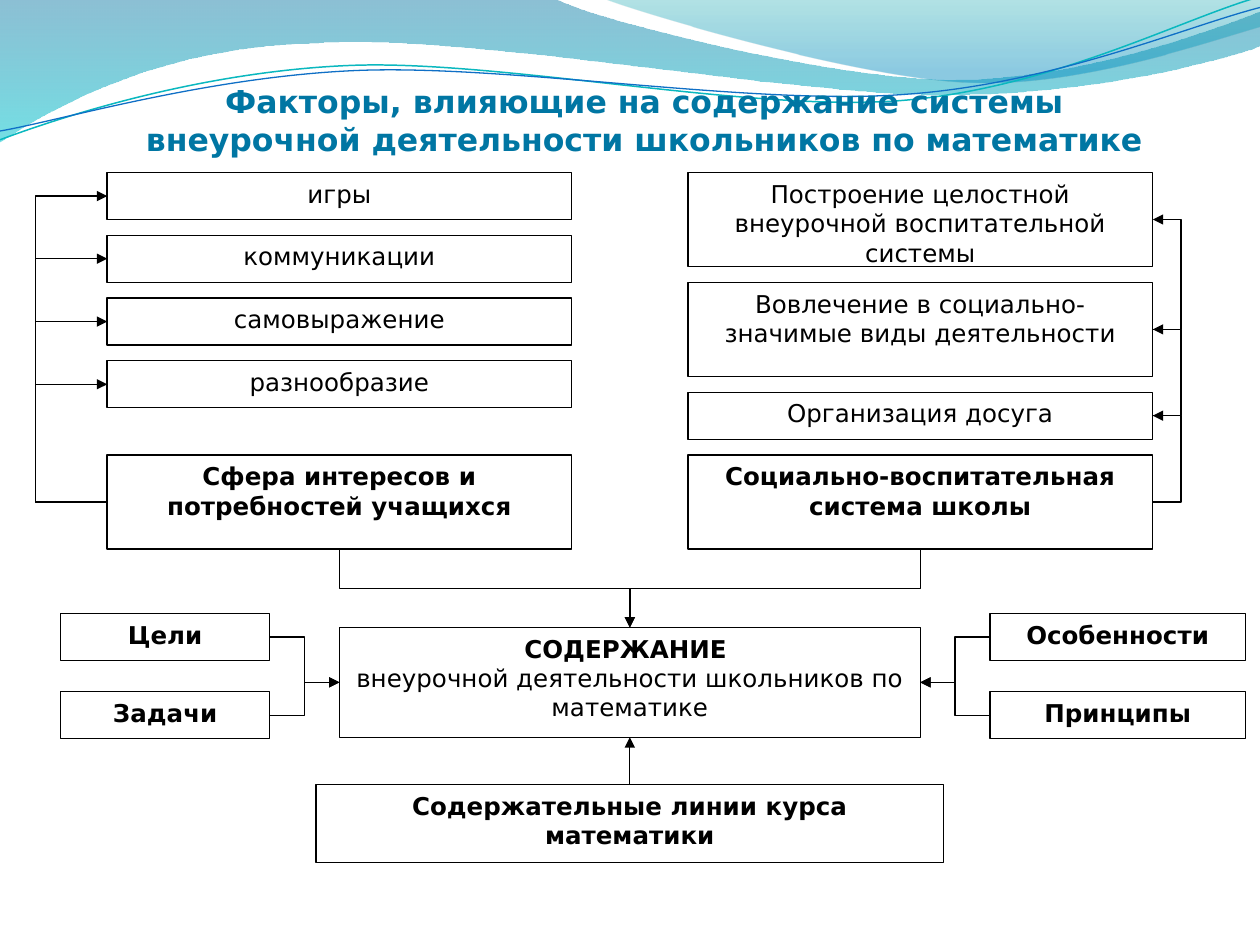
from dataclasses import dataclass
from math import cos, radians, sin

from lxml.etree import SubElement
from pptx import Presentation
from pptx.dml.color import RGBColor
from pptx.enum.shapes import MSO_CONNECTOR, MSO_SHAPE
from pptx.enum.text import MSO_ANCHOR, MSO_AUTO_SIZE, PP_ALIGN
from pptx.oxml.ns import qn
from pptx.util import Emu, Inches, Pt


@dataclass(frozen=True)
class Theme:
    font: str = "DejaVu Sans"
    ink: str = "000000"
    paper: str = "FFFFFF"
    title: str = "0076A3"
    teal: str = "0AB8BF"
    blue: str = "0F6FC6"
    head: int = 18
    body: int = 14
    rule: float = 0.75
    wide: float = 0.85
    tilt: float = 357.3
    back: tuple = (("0074A1", 0, 45), ("00C6CF", 1, 55))
    front: tuple = (("00A1A9", 0, 30), ("008BBF", 0.8, 45))


LEFT, COL, ROW = 0.85, 4.61 / 5, 4.98 / 40


def across(col):
    return Inches(LEFT + col * COL)


def down(row):
    return Inches(row * ROW)


def spin(spot, angle):
    (x, y), a = spot, radians(angle)
    return x * cos(a) - y * sin(a), x * sin(a) + y * cos(a)


def level(spots, angle):
    flat = [spin(spot, -angle) for spot in spots]
    mid = [(min(axis) + max(axis)) / 2 for axis in zip(*flat)]
    goal = spin(mid, angle)
    return [(x + goal[0] - mid[0], y + goal[1] - mid[1]) for x, y in flat]


class Board:
    def __init__(self, slide, theme):
        self.slide, self.theme = slide, theme
        self.shapes = slide.shapes

    def stroke(self, line, color, width):
        line.color.rgb = RGBColor.from_string(color)
        line.width = Pt(width)

    def style(self, para, size, color, bold=None):
        para.alignment = PP_ALIGN.CENTER
        para.font.name, para.font.size, para.font.bold = self.theme.font, Pt(size), bold
        para.font.color.rgb = RGBColor.from_string(color)

    def trail(self, start, parts, close, angle=0):
        spots = [start] + [p[i:i + 2] for p in parts for i in range(0, len(p), 2)]
        spots = [(Inches(x), Inches(y)) for x, y in level(spots, angle)]
        pen = self.shapes.build_freeform(*spots[0])
        pen.add_line_segments(spots[1:], close=close)
        shape = pen.convert_to_shape()
        shape.shadow.inherit = False
        shape.rotation = angle
        lines = list(shape._element.spPr.iter(qn("a:lnTo")))
        for part in parts:
            group, lines = lines[:len(part) // 2], lines[len(part) // 2:]
            if len(group) == 3:
                arc = SubElement(group[0].getparent(), qn("a:cubicBezTo"))
                group[0].addprevious(arc)
                for line in group:
                    arc.append(line[0])
                    line.getparent().remove(line)
        return shape

    def wave(self, start, parts, stops):
        shape = self.trail(start, parts, True)
        shape.line.fill.background()
        shape.fill.gradient()
        shape.fill.gradient_angle = 270
        for stop, (color, place, _) in zip(shape.fill.gradient_stops, stops):
            stop.color.rgb = RGBColor.from_string(color)
            stop.position = place
        tints = list(shape._element.spPr.iter(qn("a:srgbClr")))
        for tint, (_, _, alpha) in zip(tints, stops):
            SubElement(tint, qn("a:alpha")).set("val", str(alpha * 1000))

    def curve(self, start, parts, color, width):
        shape = self.trail(start, parts, False, self.theme.tilt)
        shape.fill.background()
        self.stroke(shape.line, color, width)

    def title(self, text, x, y, w, h):
        box = self.shapes.add_textbox(Inches(x), Inches(y), Inches(w), Inches(h))
        frame = box.text_frame
        frame.word_wrap = True
        frame.auto_size = MSO_AUTO_SIZE.SHAPE_TO_FIT_TEXT
        para = frame.paragraphs[0]
        para.text = text
        para.space_before = Pt(5)
        self.style(para, self.theme.head, self.theme.title, True)

    def box(self, col, row, cols, rows, *runs):
        shape = self.shapes.add_shape(
            MSO_SHAPE.RECTANGLE, across(col), down(row), Inches(cols * COL), down(rows))
        shape.shadow.inherit = False
        shape.fill.solid()
        shape.fill.fore_color.rgb = RGBColor.from_string(self.theme.paper)
        self.stroke(shape.line, self.theme.ink, self.theme.rule)
        frame = shape.text_frame
        frame.word_wrap = True
        frame.vertical_anchor = MSO_ANCHOR.TOP
        para = frame.paragraphs[0]
        same = len({bold for _, bold in runs}) == 1
        self.style(para, self.theme.body, self.theme.ink, runs[0][1] if same else None)
        for spot, (text, bold) in enumerate(runs):
            if spot:
                para.add_line_break()
            run = para.add_run()
            run.text = text
            if not same:
                run.font.bold = bold
        return shape

    def arrow(self, kind, x1, y1, x2, y2):
        link = self.shapes.add_connector(kind, int(x1), int(y1), int(x2), int(y2))
        self.stroke(link.line, self.theme.ink, self.theme.rule)
        tail = SubElement(link.line._get_or_add_ln(), qn("a:tailEnd"))
        tail.set("type", "triangle")
        SubElement(link._element.spPr, qn("a:effectLst"))
        return link

    def join(self, first, side, last, end):
        link = self.arrow(MSO_CONNECTOR.STRAIGHT, 0, 0, 0, 0)
        link.begin_connect(first, side)
        link.end_connect(last, end)

    def bend(self, c1, r1, c2, r2):
        self.arrow(MSO_CONNECTOR.ELBOW, across(c1), down(r1), across(c2), down(r2))

    def drop(self, c1, r1, c2, r2):
        x, y = (across(c1) + across(c2)) / 2, (down(r1) + down(r2)) / 2
        w, h = abs(across(c2) - across(c1)) / 2, (down(r2) - down(r1)) / 2
        turn, h = (270, -h) if c2 > c1 else (90, h)
        link = self.arrow(MSO_CONNECTOR.ELBOW, x - h, y - w, x + h, y + w)
        link._element.spPr.find(qn("a:xfrm")).set("rot", str(turn * 60000))

    def loop(self, col, r1, r2, reach):
        x, thin = across(col), Emu(1588)
        link = self.arrow(MSO_CONNECTOR.ELBOW, x, down(r1), x + thin, down(r2))
        guides = link._element.spPr.find(qn("a:prstGeom")).find(qn("a:avLst"))
        guide = SubElement(guides, qn("a:gd"))
        guide.set("name", "adj1")
        guide.set("fmla", f"val {reach * 100000}")


def main():
    deck = Presentation()
    deck.slide_width, deck.slide_height = Inches(10), Inches(7.5)
    theme = Theme()
    board = Board(deck.slides.add_slide(deck.slide_layouts[6]), theme)

    board.wave((0, 0), [
        (4.4, -0.01), (4.76, 0.17, 6.64, 0.63, 7.58, 0.63),
        (8.53, 0.63, 9.58, 0.26, 10, 0.09), (10.01, 0.36),
        (9.83, 0.44, 8.7, 0.76, 7.46, 0.75), (6.22, 0.75, 3.82, 0.28, 2.57, 0.34),
        (1.29, 0.36, 0.46, 0.83, -0.01, 1.13), (0, 0)], theme.back)
    board.wave((4.79, -0.01), [
        (5.09, 0.11, 6.82, 0.62, 7.69, 0.65), (8.56, 0.69, 9.61, 0.32, 10, 0.21),
        (10, 0), (4.79, -0.01)], theme.front)
    board.curve((0, 1.11), [
        (0.48, 0.93, 1.58, 0.57, 2.77, 0.52), (3.95, 0.47, 5.93, 0.89, 7.13, 0.8),
        (8.33, 0.71, 9.38, 0.15, 9.98, -0.02)], theme.teal, theme.wide)
    board.curve((0, 1.04), [
        (0.47, 0.96, 1.64, 0.61, 2.83, 0.56), (4.03, 0.51, 5.97, 0.84, 7.17, 0.75),
        (8.36, 0.67, 9.41, 0.21, 10, 0.06)], theme.blue, theme.rule)
    board.title("Факторы, влияющие на содержание системы внеурочной деятельности "
                "школьников по математике", 0.98, 0.6, 8.27, 0.71)

    core = board.box(2, 40, 5, 7, ("СОДЕРЖАНИЕ ", True),
                     ("внеурочной деятельности школьников по математике", False))
    course = board.box(1.8, 50, 5.4, 5, ("Содержательные линии курса математики", True))
    board.join(course, 0, core, 2)

    for col, row, rows, text, bold in (
            (0, 11, 3, "игры", False),
            (0, 15, 3, "коммуникации", False),
            (0, 19, 3, "самовыражение", False),
            (0, 23, 3, "разнообразие", False),
            (0, 29, 6, "Сфера интересов и потребностей учащихся", True),
            (5, 11, 6, "Построение целостной внеурочной воспитательной системы", False),
            (5, 18, 6, "Вовлечение в социально-значимые виды деятельности", False),
            (5, 25, 3, "Организация досуга", False),
            (5, 29, 6, "Социально-воспитательная система школы", True)):
        board.box(col, row, 4, rows, (text, bold))

    for col, cols, edge, goal, names in (
            (-0.4, 1.8, 1.4, 2, ("Цели", "Задачи")),
            (7.6, 2.2, 7.6, 7, ("Особенности", "Принципы"))):
        for row, name in zip((39.1, 44.1), names):
            board.box(col, row, cols, 3, (name, True))
            board.bend(edge, row + 1.5, goal, 43.5)

    for col in (2, 7):
        board.drop(col, 35, 4.5, 40)
    for first, last in ((32, 20.5), (24.5, 16.5), (16.5, 12.5), (32, 24.5)):
        board.loop(0, first, last, -360)
    for first, last in ((32, 26.5), (26.5, 21), (21, 14)):
        board.loop(9, first, last, 143)

    deck.save("out.pptx")


if __name__ == "__main__":
    main()
